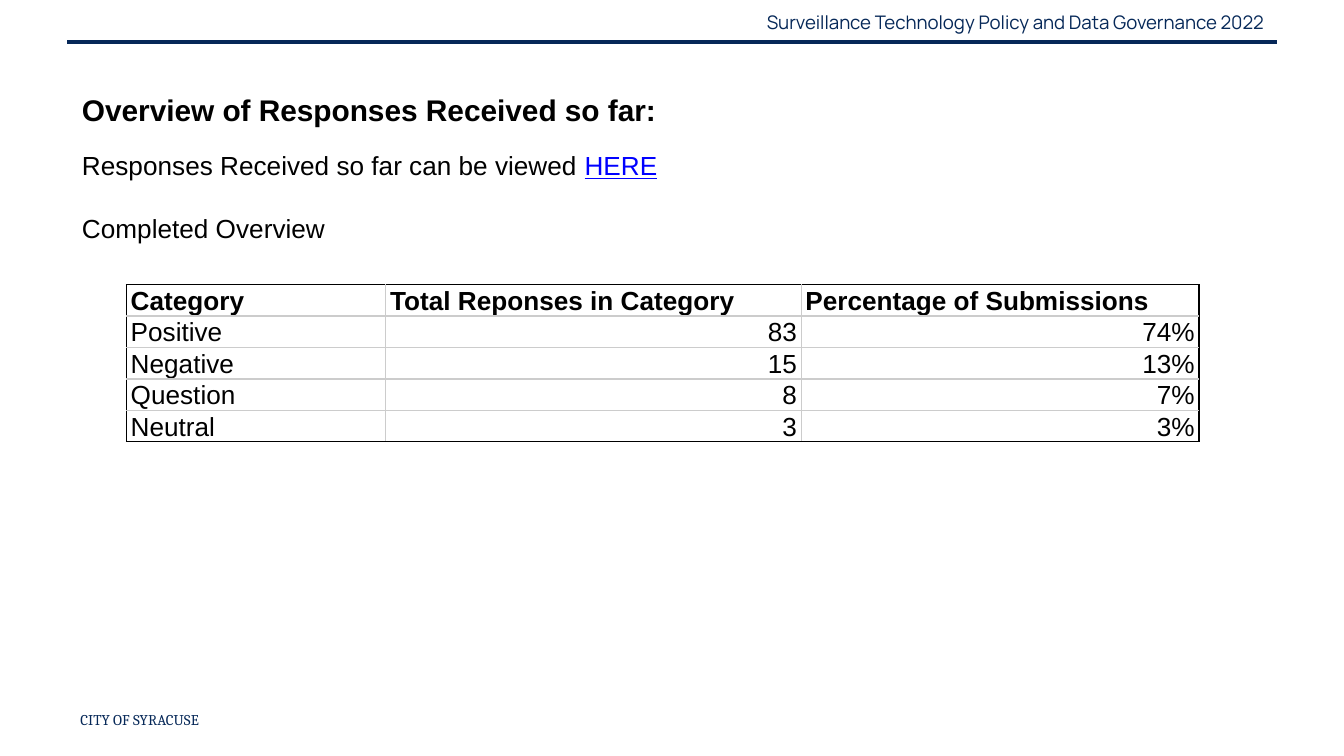
import pptx
import pptx.util
import pptx.dml.color
import pptx.enum.shapes
import pptx.enum.text
import pptx.oxml
import pptx.oxml.ns
import pptx.oxml.xmlchemy

NAVY = pptx.dml.color.RGBColor(0x06, 0x28, 0x58)
BLACK = pptx.dml.color.RGBColor(0, 0, 0)
LINK_BLUE = pptx.dml.color.RGBColor(0, 0, 0xFF)
GRID_GREY = pptx.dml.color.RGBColor(0xCC, 0xCC, 0xCC)

ALIGN = pptx.enum.text.PP_ALIGN
ANCHOR = pptx.enum.text.MSO_ANCHOR

RESPONSES = [
    ("Category", "Total Reponses in Category", "Percentage of Submissions"),
    ("Positive", "83", "74%"),
    ("Negative", "15", "13%"),
    ("Question", "8", "7%"),
    ("Neutral", "3", "3%"),
]
COLUMN_SHARES = (1.93, 3.09, 2.96)


def box(*lengths):
    return [pptx.util.Cm(length) for length in lengths]


def write(paragraph, text, size=14, font="Arial", color=BLACK, bold=False,
          underline=False, align=ALIGN.LEFT, before=0):
    paragraph.alignment = align
    paragraph.space_before = pptx.util.Pt(before)
    run = paragraph.add_run()
    run.text = text
    run.font.size = pptx.util.Pt(size)
    run.font.name = font
    run.font.color.rgb = color
    run.font.bold = bold
    run.font.underline = underline


def text_frame(slide, left, top, width, height, anchor=ANCHOR.MIDDLE):
    frame = slide.shapes.add_textbox(left, top, width, height).text_frame
    frame.word_wrap = True
    frame.vertical_anchor = anchor
    return frame


def add_header(slide, left, top, width, height):
    bottom = top + height
    rule = slide.shapes.add_connector(
        pptx.enum.shapes.MSO_CONNECTOR.STRAIGHT, left, bottom, left + width, bottom)
    rule.line.color.rgb = NAVY
    rule.line.width = pptx.util.Pt(2.25)
    rule._element.spPr.append(pptx.oxml.xmlchemy.OxmlElement("a:effectLst"))
    topic_width = pptx.util.Cm(10.9)
    topic = text_frame(slide, left + width - topic_width, top, topic_width, height)
    write(topic.paragraphs[0], "Surveillance Technology Policy and Data Governance 2022",
          size=10, font="Manrope", color=NAVY, align=ALIGN.RIGHT)


def add_footer(slide, left, top, width, height):
    city = text_frame(slide, left, top, width, height)
    write(city.paragraphs[0], "CITY OF SYRACUSE", size=8, font="Cambria", color=NAVY)


def add_overview(slide, left, top, width, height):
    overview = text_frame(slide, left, top, width, height, ANCHOR.TOP)
    write(overview.paragraphs[0], "Overview of Responses Received so far:",
          size=16, bold=True, before=1)
    responses = overview.add_paragraph()
    write(responses, "Responses Received so far can be viewed ", before=12)
    write(responses, "HERE", color=LINK_BLUE, underline=True, before=12)
    write(overview.add_paragraph(), "Completed Overview", before=17)


def set_border(cell, side, color):
    border = pptx.oxml.parse_xml(
        f'<a:{side} {pptx.oxml.ns.nsdecls("a")} w="9525"><a:solidFill>'
        f'<a:srgbClr val="{color}"/></a:solidFill></a:{side}>')
    cell._tc.get_or_add_tcPr().append(border)


def add_response_table(slide, left, top, width, height):
    row_count, column_count = len(RESPONSES), len(COLUMN_SHARES)
    table = slide.shapes.add_table(
        row_count, column_count, left, top, width, height).table
    for column, share in zip(table.columns, COLUMN_SHARES):
        column.width = int(width * share / sum(COLUMN_SHARES))
    for r, values in enumerate(RESPONSES):
        table.rows[r].height = height // row_count
        for c, value in enumerate(values):
            cell = table.cell(r, c)
            cell.margin_left = cell.margin_right = pptx.util.Cm(0.08)
            cell.margin_top = cell.margin_bottom = 0
            cell.vertical_anchor = ANCHOR.BOTTOM
            outer_edges = {"lnL": c == 0, "lnR": c == column_count - 1,
                           "lnT": r == 0, "lnB": r == row_count - 1}
            for side, is_outer in outer_edges.items():
                set_border(cell, side, BLACK if is_outer else GRID_GREY)
            cell.fill.background()
            write(cell.text_frame.paragraphs[0], value, bold=r == 0,
                  align=ALIGN.RIGHT if r and c else ALIGN.LEFT)


def main():
    deck = pptx.Presentation()
    deck.slide_width, deck.slide_height = box(25.4, 14.29)
    slide = deck.slides.add_slide(deck.slide_layouts[6])
    add_header(slide, *box(1.27, 0.03, 22.86, 0.76))
    add_footer(slide, *box(1.27, 13.23, 5.92, 0.76))
    add_overview(slide, *box(1.3, 1.6, 22.43, 3.58))
    add_response_table(slide, *box(2.39, 5.38, 20.27, 2.78))
    deck.save("out.pptx")


if __name__ == "__main__":
    main()
